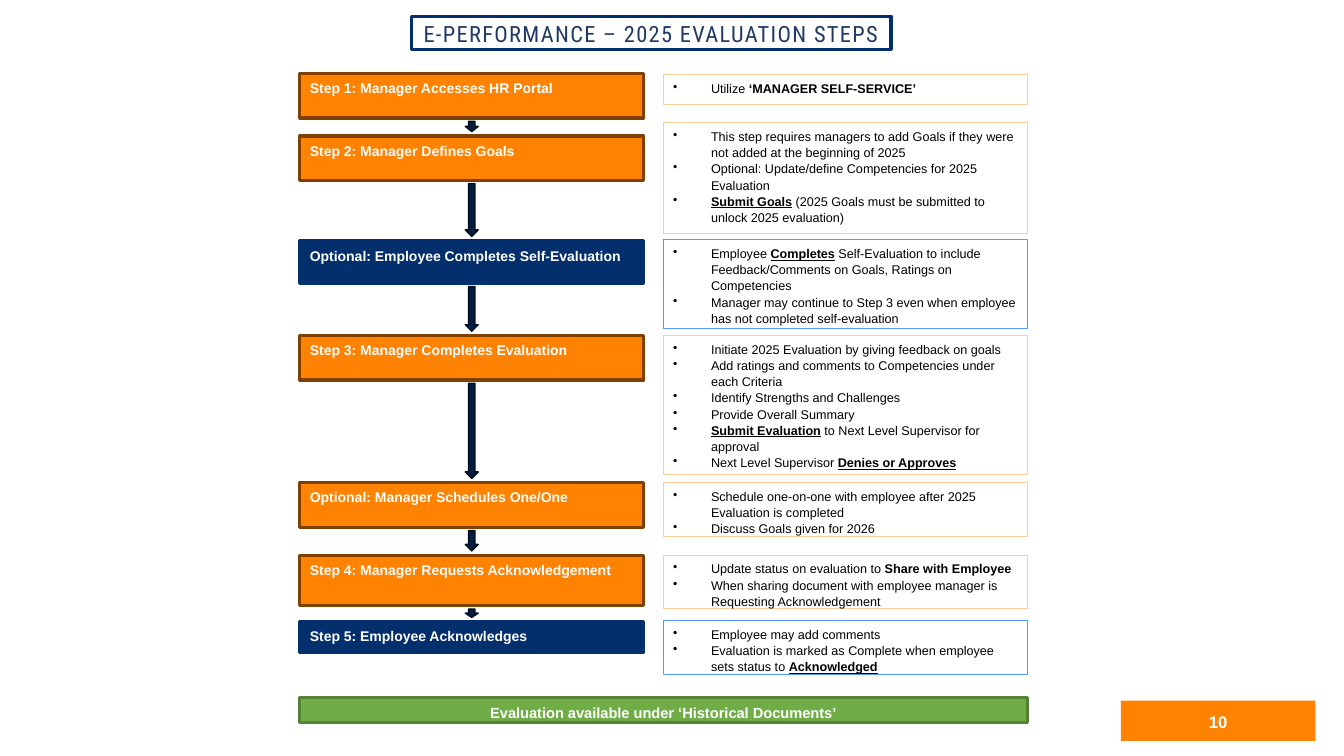
from lxml.etree import SubElement
from pptx import Presentation
from pptx.dml.color import RGBColor
from pptx.enum.shapes import MSO_SHAPE as Shape
from pptx.enum.text import MSO_ANCHOR as Anchor, PP_ALIGN as Align
from pptx.oxml.ns import qn
from pptx.util import Pt

WHITE = RGBColor(0xFF, 0xFF, 0xFF)
BLACK = RGBColor(0x00, 0x00, 0x00)
ORANGE = RGBColor(0xFF, 0x82, 0x00)
BROWN = RGBColor(0x80, 0x41, 0x00)
PEACH = RGBColor(0xFF, 0xCD, 0x99)
NAVY = RGBColor(0x03, 0x30, 0x6C)
SKY = RGBColor(0x53, 0x9A, 0xFA)
TITLE_BLUE = RGBColor(0x1F, 0x38, 0x64)
ARROW_FILL = RGBColor(0x02, 0x1D, 0x41)
ARROW_LINE = RGBColor(0x01, 0x0D, 0x1C)
GREEN = RGBColor(0x70, 0xAD, 0x47)
DARK_GREEN = RGBColor(0x54, 0x82, 0x35)

MANAGER = (ORANGE, BROWN, PEACH)
EMPLOYEE = (NAVY, NAVY, SKY)
PLAIN, BOLD, ACTION = "plain", "bold", "action"

STEP_LEFT, STEP_WIDTH = 214.2, 245.5
DETAIL_LEFT, DETAIL_WIDTH = 473.8, 260
ARROW_WIDTH = 9.2
ARROW_GAP_ABOVE, ARROW_GAP_BELOW = 2.3, 3.2
BULLET_INDENT = 27

STEPS = [
    ("Step 1: Manager Accesses HR Portal", MANAGER, 52.6, 31.7, 53.3, 21.6, [
        [("Utilize ", PLAIN), ("‘MANAGER SELF-SERVICE’", BOLD)],
    ]),
    ("Step 2: Manager Defines Goals", MANAGER, 97.2, 31.7, 87.8, 79.2, [
        [("This step requires managers to add Goals if they were not added "
          "at the beginning of 2025", PLAIN)],
        [("Optional: Update/define Competencies for 2025 Evaluation", PLAIN)],
        [("Submit Goals", ACTION),
         (" (2025 Goals must be submitted to unlock 2025 evaluation)", PLAIN)],
    ]),
    ("Optional: Employee Completes Self-Evaluation", EMPLOYEE,
     172.1, 30.2, 171.4, 63.4, [
        [("Employee ", PLAIN), ("Completes", ACTION),
         (" Self-Evaluation to include Feedback/Comments on Goals, "
          "Ratings on Competencies", PLAIN)],
        [("Manager may continue to Step 3 even when employee has not "
          "completed self-evaluation", PLAIN)],
     ]),
    ("Step 3: Manager Completes Evaluation", MANAGER, 239.8, 31.7, 239.8, 99.4, [
        [("Initiate 2025 Evaluation by giving feedback on goals", PLAIN)],
        [("Add ratings and comments to Competencies under each Criteria", PLAIN)],
        [("Identify Strengths and Challenges", PLAIN)],
        [("Provide Overall Summary", PLAIN)],
        [("Submit Evaluation", ACTION),
         (" to Next Level Supervisor for approval", PLAIN)],
        [("Next Level Supervisor ", PLAIN), ("Denies or Approves", ACTION)],
    ]),
    ("Optional: Manager Schedules One/One", MANAGER, 344.9, 31.7, 344.9, 38.2, [
        [("Schedule one-on-one with employee after 2025 Evaluation is "
          "completed", PLAIN)],
        [("Discuss Goals given for 2026", PLAIN)],
    ]),
    ("Step 4: Manager Requests Acknowledgement", MANAGER, 396.7, 36, 396.7, 38.2, [
        [("Update status on evaluation to ", PLAIN), ("Share with Employee", BOLD)],
        [("When sharing document with employee manager is Requesting "
          "Acknowledgement", PLAIN)],
    ]),
    ("Step 5: Employee Acknowledges", EMPLOYEE, 444.2, 21.6, 443.5, 38.2, [
        [("Employee may add comments", PLAIN)],
        [("Evaluation is marked as Complete when employee sets status to ", PLAIN),
         ("Acknowledged", ACTION)],
    ]),
]


def add_block(slide, left, top, width, height, fill, line=None, weight=2.25,
              kind=Shape.RECTANGLE):
    """Add a filled preset shape, outlined when a line colour is given."""
    block = slide.shapes.add_shape(kind, Pt(left), Pt(top), Pt(width), Pt(height))
    block.shadow.inherit = False
    block.fill.solid()
    block.fill.fore_color.rgb = fill
    if line is None:
        block.line.fill.background()
    else:
        block.line.color.rgb = line
        block.line.width = Pt(weight)
    return block


def add_bullet(paragraph):
    """Give a paragraph a round bullet with a hanging indent."""
    properties = paragraph._p.get_or_add_pPr()
    properties.set("marL", str(Pt(BULLET_INDENT)))
    properties.set("indent", str(-Pt(BULLET_INDENT)))
    SubElement(properties, qn("a:buChar")).set("char", "•")


def write(block, paragraphs, size=10, color=WHITE, font="Arial", bold=True,
          align=Align.LEFT, anchor=Anchor.TOP, bullets=False, tracking=0):
    """Write paragraphs of (text, emphasis) runs into a block."""
    frame = block.text_frame
    frame.word_wrap = True
    frame.vertical_anchor = anchor
    for index, runs in enumerate(paragraphs):
        paragraph = frame.paragraphs[0] if index == 0 else frame.add_paragraph()
        if bullets:
            add_bullet(paragraph)
        paragraph.alignment = align
        paragraph.line_spacing = 1.07
        paragraph.space_after = Pt(8 if index == len(paragraphs) - 1 else 0)
        for text, emphasis in runs:
            run = paragraph.add_run()
            run.text = text
            run.font.name = font
            run.font.size = Pt(size)
            run.font.color.rgb = color
            run.font.bold = bold or emphasis != PLAIN
            run.font.underline = emphasis == ACTION
            if tracking:
                run.font._element.set("spc", str(tracking * 100))


def add_label(slide, text, box, fill, line=None, **text_format):
    """Add a block holding a single line of text."""
    write(add_block(slide, *box, fill, line), [[(text, PLAIN)]], **text_format)


def add_details(slide, points, top, height, line):
    """Add the bulleted explanation beside a step."""
    details = add_block(slide, DETAIL_LEFT, top, DETAIL_WIDTH, height,
                        WHITE, line, weight=0.75)
    write(details, points, size=9, color=BLACK, bold=False, bullets=True)


def add_arrow(slide, step_bottom, next_top):
    """Add a down arrow filling the gap between two steps."""
    top = step_bottom + ARROW_GAP_ABOVE
    add_block(slide, STEP_LEFT + (STEP_WIDTH - ARROW_WIDTH) / 2, top, ARROW_WIDTH,
              next_top - ARROW_GAP_BELOW - top, ARROW_FILL, ARROW_LINE, 1,
              Shape.DOWN_ARROW)


def main():
    """Build the evaluation steps slide and save it."""
    deck = Presentation()
    deck.slide_width, deck.slide_height = Pt(960), Pt(540)
    slide = deck.slides.add_slide(deck.slide_layouts[6])

    add_label(slide, "10", (800.6, 500.4, 139, 28.8), ORANGE, size=12,
              align=Align.CENTER, anchor=Anchor.MIDDLE)
    add_label(slide, "E-PERFORMANCE – 2025 EVALUATION STEPS",
              (293.8, 11.5, 342.7, 23.8), WHITE, NAVY, size=16, color=TITLE_BLUE,
              font="Roboto Condensed", bold=False, align=Align.CENTER,
              anchor=Anchor.MIDDLE, tracking=1)
    for name, role, top, height, detail_top, detail_height, points in STEPS:
        fill, line, detail_line = role
        add_label(slide, name, (STEP_LEFT, top, STEP_WIDTH, height), fill, line)
        add_details(slide, points, detail_top, detail_height, detail_line)
    for step, following in zip(STEPS, STEPS[1:]):
        add_arrow(slide, step[2] + step[3], following[2])
    add_label(slide, "Evaluation available under ‘Historical Documents’",
              (STEP_LEFT, 498.2, DETAIL_LEFT + DETAIL_WIDTH - STEP_LEFT, 18),
              GREEN, DARK_GREEN, size=10.5, align=Align.CENTER)
    deck.save("out.pptx")


if __name__ == "__main__":
    main()
